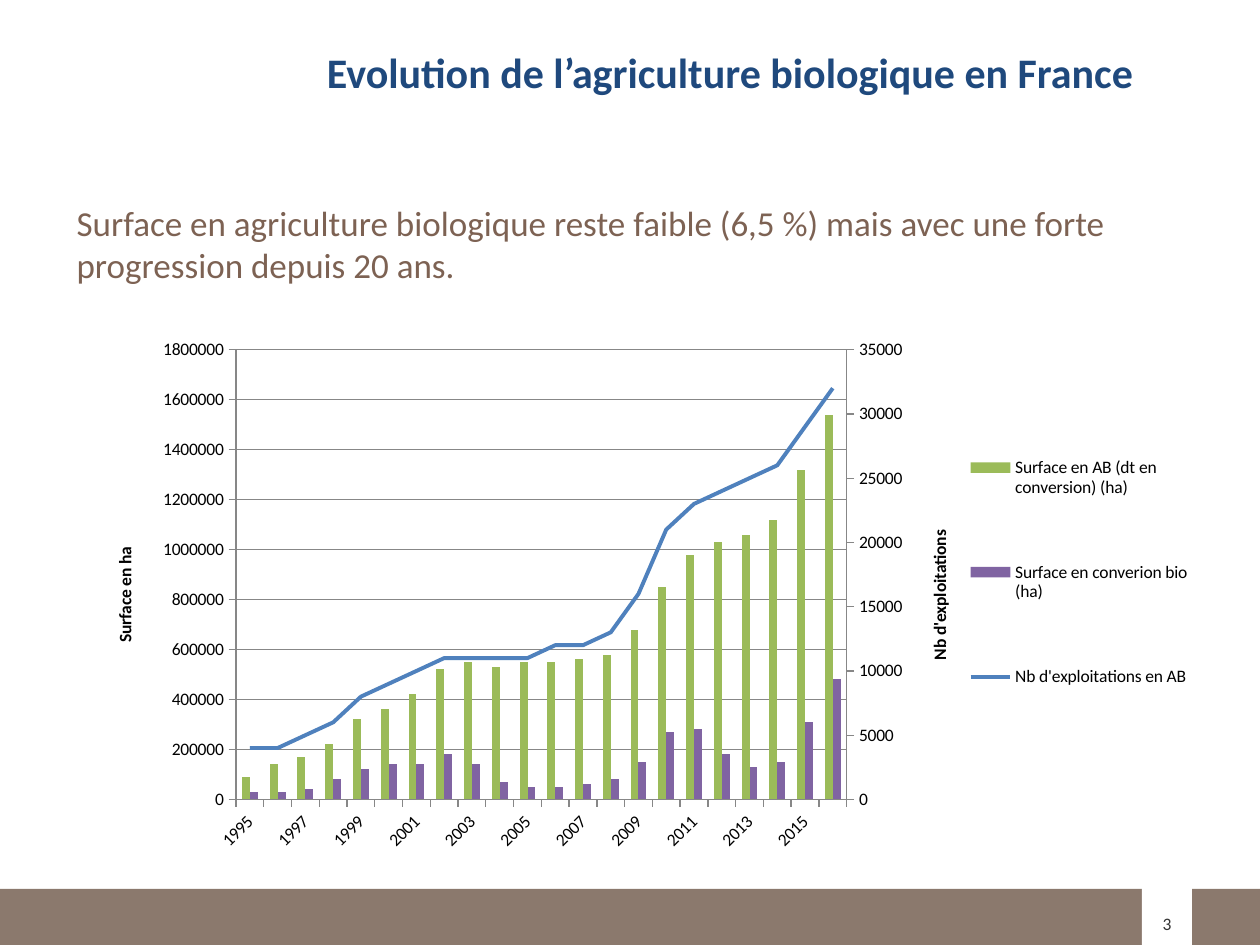
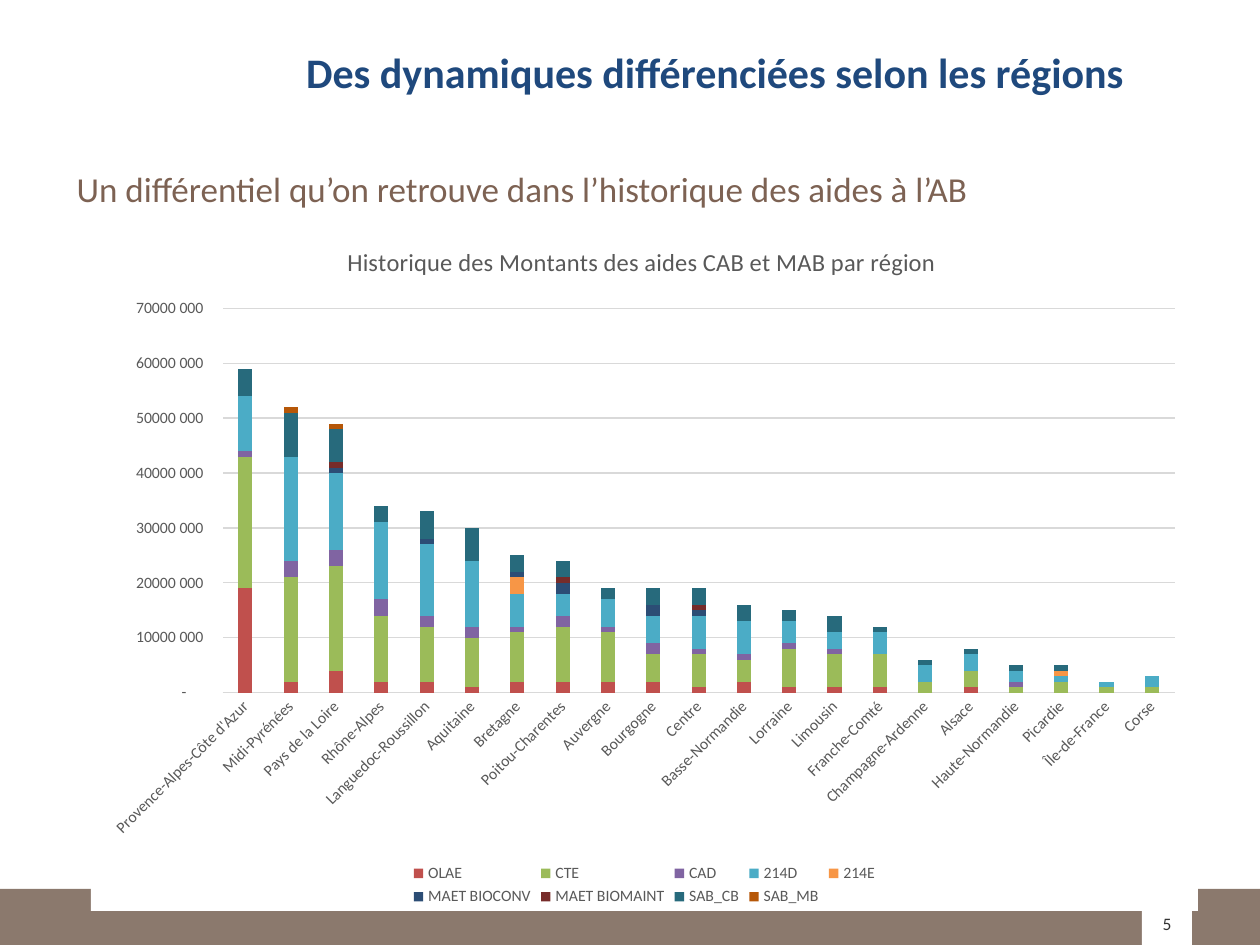
from copy import deepcopy

from lxml.etree import SubElement
from pptx import Presentation
from pptx.chart.axis import CategoryAxis, ValueAxis
from pptx.chart.data import CategoryChartData
from pptx.dml.color import RGBColor
from pptx.enum.chart import XL_CHART_TYPE, XL_LEGEND_POSITION, XL_MARKER_STYLE, XL_TICK_MARK
from pptx.enum.shapes import MSO_SHAPE
from pptx.enum.text import MSO_ANCHOR, MSO_AUTO_SIZE, PP_ALIGN
from pptx.oxml.ns import qn
from pptx.util import Emu, Pt

FONT = "Calibri"
BROWN, WHITE, NAVY, TAUPE = "8B796D", "FFFFFF", "1F497D", "7D6253"
BLACK, DARK, GREY, PALE, LINE_GREY = "000000", "333333", "595959", "D9D9D9", "878787"
BAND = (0, 889, 1260, 56)
NUMBER_TAB = (1142, 878, 50, 67)
NUMBER_BOX = (1137, 907, 60, 33)
TITLE_BOX = (64, 38, 1082, 68)
AMOUNT = r'_-* #\ ##0\ _€_-;\-* #\ ##0\ _€_-;_-* "-"??\ _€_-;_-@_-'

YEARS = list(range(1995, 2017))
SURFACES = [
    ("Surface en AB (dt en conversion) (ha)", "9BBB59",
     [9, 14, 17, 22, 32, 36, 42, 52, 55, 53, 55, 55, 56, 58, 68, 85, 98, 103, 106, 112, 132, 154]),
    ("Surface en converion bio (ha)", "8064A2",
     [3, 3, 4, 8, 12, 14, 14, 18, 14, 7, 5, 5, 6, 8, 15, 27, 28, 18, 13, 15, 31, 48]),
]
FARMS = ("Nb d'exploitations en AB", "4F81BD",
         [4, 4, 5, 6, 8, 9, 10, 11, 11, 11, 11, 12, 12, 13, 16, 21, 23, 24, 25, 26, 29, 32])

REGIONS = [
    "Provence-Alpes-Côte d'Azur", "Midi-Pyrénées", "Pays de la Loire", "Rhône-Alpes",
    "Languedoc-Roussillon", "Aquitaine", "Bretagne", "Poitou-Charentes", "Auvergne",
    "Bourgogne", "Centre", "Basse-Normandie", "Lorraine", "Limousin", "Franche-Comté",
    "Champagne-Ardenne", "Alsace", "Haute-Normandie", "Picardie", "Île-de-France", "Corse",
]
NO = None
AIDS = [
    ("OLAE", "C0504D",
     [19, 2, 4, 2, 2, 1, 2, 2, 2, 2, 1, 2, 1, 1, 1, 0, 1, 0, 0, 0, 0]),
    ("CTE", "9BBB59",
     [24, 19, 19, 12, 10, 9, 9, 10, 9, 5, 6, 4, 7, 6, 6, 2, 3, 1, 2, 1, 1]),
    ("CAD", "8064A2",
     [1, 3, 3, 3, 2, 2, 1, 2, 1, 2, 1, 1, 1, 1, 0, 0, 0, 1, 0, 0, 0]),
    ("214D", "4BACC6",
     [10, 19, 14, 14, 13, 12, 6, 4, 5, 5, 6, 6, 4, 3, 4, 3, 3, 2, 1, 1, 2]),
    ("214E", "F79646",
     [NO, NO, 0, NO, NO, NO, 3, 0] + [NO] * 10 + [1, NO, NO]),
    ("MAET BIOCONV", "2C4D75",
     [0, NO, 1, 0, 1, 0, 1, 2, NO, 2, 1, 0, 0, NO, NO, 0, 0, 0, 0, 0, NO]),
    ("MAET BIOMAINT", "772C2A",
     [NO, 0, 1, NO, 0, 0, 0, 1, 0, 0, 1, 0, 0, NO, 0, 0, 0, 0, NO, 0, NO]),
    ("SAB_CB", "276A7C",
     [5, 8, 6, 3, 5, 6, 3, 3, 2, 3, 3, 3, 2, 3, 1, 1, 1, 1, 1, 0, NO]),
    ("SAB_MB", "B65708", [0, 1, 1] + [0] * 17 + [NO]),
]


def px(length):
    return Emu(round(length * 914400 / 126))


def colour(value):
    return RGBColor.from_string(value)


def apply(target, **values):
    for name, value in values.items():
        setattr(target, name, value)


def style_font(font, size, value, bold=False):
    apply(font, name=FONT, size=Pt(size), bold=bold)
    font.color.rgb = colour(value)


def style_line(line, value, width=0.75):
    line.color.rgb = colour(value)
    line.width = Pt(width)


def place(shape, box):
    apply(shape, **dict(zip(("left", "top", "width", "height"), map(px, box))))


def write(shape, text, size, value, bold=False, align=PP_ALIGN.LEFT, anchor=MSO_ANCHOR.TOP):
    frame = shape.text_frame
    apply(frame, word_wrap=True, auto_size=MSO_AUTO_SIZE.NONE, vertical_anchor=anchor)
    para = frame.paragraphs[0]
    apply(para, alignment=align, space_before=Pt(0))
    span = para.add_run()
    span.text = text
    style_font(span.font, size, value, bold)
    return para


def add_block(page, box, value):
    block = page.shapes.add_shape(MSO_SHAPE.RECTANGLE, *map(px, box))
    block.shadow.inherit = False
    block.fill.solid()
    block.fill.fore_color.rgb = colour(value)
    block.line.fill.background()


def add_page(deck, title, number, message, body_box):
    page = deck.slides.add_slide(deck.slide_layouts[1])
    add_block(page, BAND, BROWN)
    add_block(page, NUMBER_TAB, WHITE)
    place(page.shapes.title, TITLE_BOX)
    write(page.shapes.title, title, 24, NAVY, True, PP_ALIGN.RIGHT, MSO_ANCHOR.MIDDLE)
    body = page.placeholders[1]
    place(body, body_box)
    para = write(body, message, 20, TAUPE)
    properties = para._p.get_or_add_pPr()
    properties.set("marL", "0")
    properties.set("indent", "0")
    SubElement(properties, qn("a:buNone"))
    number_text = page.shapes.add_textbox(*map(px, NUMBER_BOX))
    write(number_text, number, 10, DARK, align=PP_ALIGN.CENTER, anchor=MSO_ANCHOR.MIDDLE)
    return page


def set_layout(parent, position, area, inner=False):
    for old in parent.findall(qn("c:layout")):
        parent.remove(old)
    layout = SubElement(parent, qn("c:layout"))
    parent.insert(position, layout)
    manual = SubElement(layout, qn("c:manualLayout"))
    settings = [("layoutTarget", "inner")] if inner else []
    settings += [("xMode", "edge"), ("yMode", "edge")]
    settings += zip("xywh", map(str, area))
    for name, value in settings:
        SubElement(manual, qn(f"c:{name}")).set("val", value)


def add_column_chart(page, kind, box, categories, series, gap, plot_area):
    data = CategoryChartData()
    data.categories = categories
    for name, _, values in series:
        data.add_series(name, values)
    chart = page.shapes.add_chart(kind, *map(px, box), data).chart
    style_font(chart.font, 10, BLACK)
    plot = chart.plots[0]
    apply(plot, gap_width=gap, vary_by_categories=False)
    for item, (_, value, _) in zip(plot.series, series):
        item.format.fill.solid()
        item.format.fill.fore_color.rgb = colour(value)
    set_layout(chart._chartSpace.chart.plotArea, 0, plot_area, True)
    chart.has_legend = True
    chart.legend.include_in_layout = False
    return chart


def rotate(element, angle):
    element.find(".//" + qn("a:bodyPr")).set("rot", str(angle * 60000))


def style_axis(axis, size, value, line, tick):
    style_font(axis.tick_labels.font, size, value)
    apply(axis, major_tick_mark=tick, minor_tick_mark=XL_TICK_MARK.NONE)
    if line:
        style_line(axis.format.line, line)
    else:
        axis.format.line.fill.background()


def style_value_axis(axis, maximum, step, text):
    apply(axis, minimum_scale=0, maximum_scale=maximum, major_unit=step, has_title=True)
    style_axis(axis, 10, BLACK, LINE_GREY, XL_TICK_MARK.OUTSIDE)
    axis.axis_title.text_frame.text = text
    style_font(axis.axis_title.text_frame.paragraphs[0].runs[0].font, 10, BLACK, True)
    rotate(axis.axis_title._element, -90)


def add_right_line(chart, value):
    plot_area = chart._chartSpace.chart.plotArea
    bars = plot_area.find(qn("c:barChart"))
    series = bars.findall(qn("c:ser"))[-1]
    for name in ("c:invertIfNegative", "c:spPr"):
        for element in series.findall(qn(name)):
            series.remove(element)
    lines = SubElement(plot_area, qn("c:lineChart"))
    bars.addnext(lines)
    SubElement(lines, qn("c:grouping")).set("val", "standard")
    SubElement(lines, qn("c:varyColors")).set("val", "0")
    lines.append(series)
    SubElement(lines, qn("c:marker")).set("val", "1")
    last = chart.value_axis._element
    copies = [deepcopy(axis._element) for axis in (chart.category_axis, chart.value_axis)]
    identifiers = ("5001", "5002")
    for element, own, other in zip(copies, identifiers, reversed(identifiers)):
        SubElement(lines, qn("c:axId")).set("val", own)
        element.find(qn("c:axId")).set("val", own)
        element.find(qn("c:crossAx")).set("val", other)
        last.addnext(element)
        last = element
    CategoryAxis(copies[0]).visible = False
    copies[1].find(qn("c:axPos")).set("val", "r")
    copies[1].find(qn("c:crosses")).set("val", "max")
    line = chart.plots[1].series[0]
    line.smooth = False
    line.marker.style = XL_MARKER_STYLE.NONE
    style_line(line.format.line, value, 2.25)
    right = ValueAxis(copies[1])
    right.has_major_gridlines = False
    return right


def scaled(series, unit):
    name, value, numbers = series
    return name, value, [NO if number is NO else number * unit for number in numbers]


def add_growth_chart(page, box):
    series = [scaled(surface, 10000) for surface in SURFACES] + [scaled(FARMS, 1000)]
    chart = add_column_chart(page, XL_CHART_TYPE.COLUMN_CLUSTERED, box, YEARS, series,
                             150, (0.151, 0.051, 0.539, 0.827))
    chart.has_title = False
    chart.plots[0].overlap = 0
    left = chart.value_axis
    right = add_right_line(chart, FARMS[1])
    years = chart.category_axis
    style_axis(years, 10, BLACK, LINE_GREY, XL_TICK_MARK.OUTSIDE)
    rotate(years._element.find(qn("c:txPr")), -45)
    skip = SubElement(years._element, qn("c:tickLblSkip"))
    skip.set("val", "2")
    years._element.find(qn("c:noMultiLvlLbl")).addprevious(skip)
    style_value_axis(left, 1800000, 200000, "Surface en ha")
    style_value_axis(right, 35000, 5000, "Nb d'exploitations")
    style_line(left.major_gridlines.format.line, LINE_GREY)
    chart.legend.position = XL_LEGEND_POSITION.RIGHT
    style_font(chart.legend.font, 10, BLACK)
    set_layout(chart.legend._element, 1, (0.79, 0.13, 0.21, 0.66))


def add_aid_chart(page, box):
    chart = add_column_chart(page, XL_CHART_TYPE.COLUMN_STACKED, box, REGIONS,
                             [scaled(aid, 1000000) for aid in AIDS],
                             219, (0.119, 0.128, 0.86, 0.556))
    chart.plots[0].overlap = 100
    chart.has_title = True
    frame = chart.chart_title.text_frame
    frame.text = "Historique des Montants des aides CAB et MAB par région "
    style_font(frame.paragraphs[0].runs[0].font, 14, GREY)
    style_axis(chart.category_axis, 9, GREY, PALE, XL_TICK_MARK.NONE)
    rotate(chart.category_axis._element.find(qn("c:txPr")), -45)
    amounts = chart.value_axis
    apply(amounts, minimum_scale=0, maximum_scale=70000000, major_unit=10000000)
    style_axis(amounts, 9, GREY, None, XL_TICK_MARK.NONE)
    apply(amounts.tick_labels, number_format=AMOUNT, number_format_is_linked=False)
    style_line(amounts.major_gridlines.format.line, PALE)
    chart.legend.position = XL_LEGEND_POSITION.BOTTOM
    style_font(chart.legend.font, 9, GREY)
    space = chart._chartSpace
    properties = SubElement(space, qn("c:spPr"))
    space.chart.addnext(properties)
    fill = SubElement(properties, qn("a:solidFill"))
    SubElement(fill, qn("a:srgbClr")).set("val", WHITE)
    SubElement(SubElement(properties, qn("a:ln")), qn("a:noFill"))


def main():
    deck = Presentation()
    apply(deck, slide_width=px(1260), slide_height=px(945))
    growth = add_page(
        deck, "Evolution de l’agriculture biologique en France", "3",
        "Surface en agriculture biologique reste faible (6,5 %) mais avec une forte "
        "progression depuis 20 ans.", (64, 195, 1128, 645))
    add_growth_chart(growth, (65, 322, 1133, 544))
    regions = add_page(
        deck, "Des dynamiques différenciées selon les régions ", "5",
        "Un différentiel qu’on retrouve dans l’historique des aides à l’AB",
        (64, 161, 1128, 750))
    add_aid_chart(regions, (91, 220, 1107, 691))
    deck.save("out.pptx")


if __name__ == "__main__":
    main()
